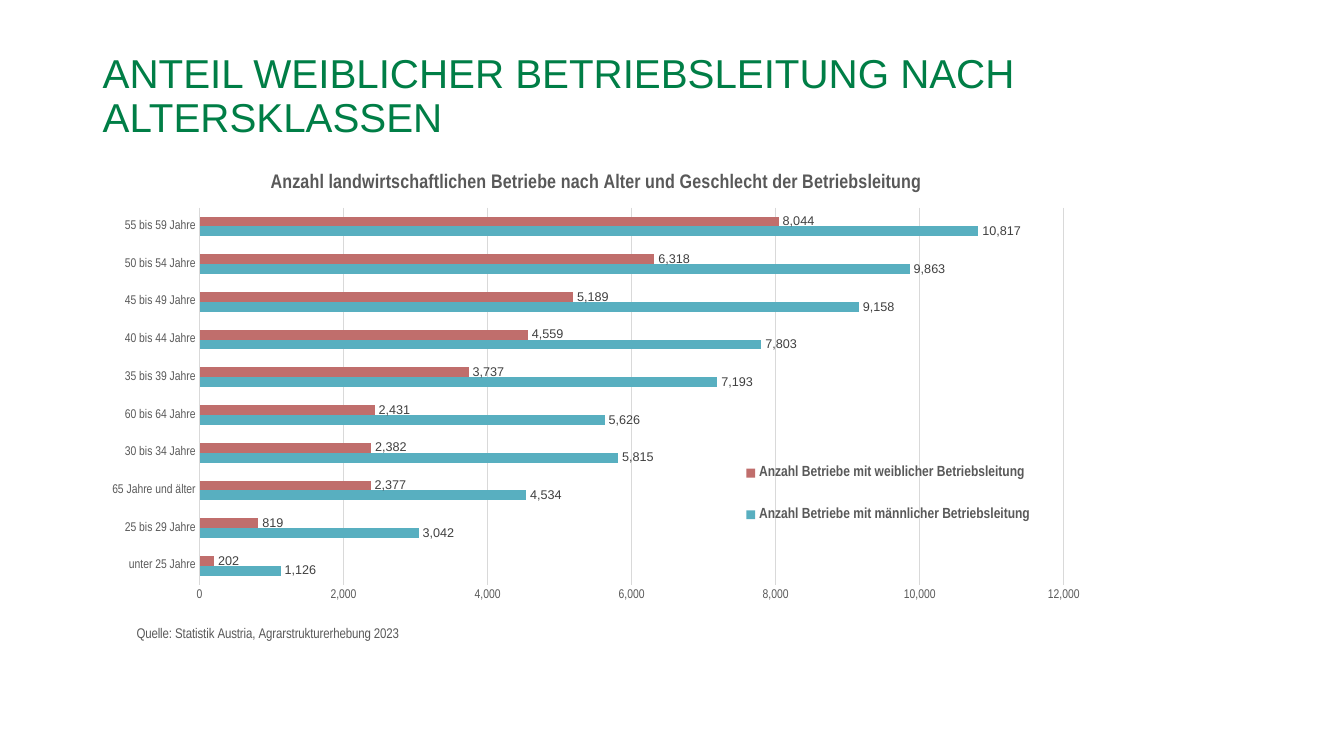
from lxml import etree
from pptx import Presentation
from pptx import util as u
from pptx.chart import data as cd
from pptx.dml import color as dc
from pptx.enum import chart as ec
from pptx.enum import text as et

HUES = {"green": "007E46", "grey": "595959", "dark": "404040", "black": "000000",
        "grid": "D9D9D9", "men": "58AFC0", "women": "C06E6C"}
AGES = ["unter 25 Jahre", "25 bis 29 Jahre", "65 Jahre und älter", "30 bis 34 Jahre",
        "60 bis 64 Jahre", "35 bis 39 Jahre", "40 bis 44 Jahre", "45 bis 49 Jahre",
        "50 bis 54 Jahre", "55 bis 59 Jahre"]
FARMS = {
    "men": ("Anzahl Betriebe mit männlicher Betriebsleitung",
            [1126, 3042, 4534, 5815, 5626, 7193, 7803, 9158, 9863, 10817]),
    "women": ("Anzahl Betriebe mit weiblicher Betriebsleitung",
              [202, 819, 2377, 2382, 2431, 3737, 4559, 5189, 6318, 8044]),
}


def put(item, **vals):
    for key, val in vals.items():
        setattr(item, key, val)


class Deck:
    wide, narrow = "Arial", "Arial Narrow"

    def __init__(self):
        self.prs = Presentation()
        put(self.prs, slide_width=u.Inches(13.33), slide_height=u.Inches(7.5))
        self.slide = self.prs.slides.add_slide(self.prs.slide_layouts[6])

    def hue(self, name):
        return dc.RGBColor.from_string(HUES[name])

    def font(self, font, size, tint, face, bold=False):
        put(font, size=u.Pt(size), name=face, bold=bold)
        font.color.rgb = self.hue(tint)

    def line(self, fmt):
        fmt.line.color.rgb = self.hue("grid")
        fmt.line.width = u.Pt(0.75)

    def head(self, words, *box):
        frame = self.slide.shapes.add_textbox(*map(u.Inches, box)).text_frame
        put(frame, word_wrap=True, vertical_anchor=et.MSO_ANCHOR.MIDDLE)
        para = frame.paragraphs[0]
        put(para, text=words, line_spacing=0.9)
        self.font(para.runs[0].font, 28.8, "green", self.wide)

    def place(self, node, spot, **vals):
        space = node.nsmap["c"]
        for old in node.findall(f"{{{space}}}layout"):
            node.remove(old)
        outer = etree.Element(f"{{{space}}}layout")
        manual = etree.SubElement(outer, f"{{{space}}}manualLayout")
        for key, val in vals.items():
            etree.SubElement(manual, f"{{{space}}}{key}").set("val", str(val))
        node.insert(spot, outer)

    def label(self, title, words, size, bold):
        para = title.text_frame.paragraphs[0]
        para.text = words
        self.font(para.runs[0].font, size, "grey", self.narrow, bold)

    def bars(self, cats, rows, *box):
        data = cd.CategoryChartData(number_format="#,##0")
        data.categories = cats
        for name, vals in rows.values():
            data.add_series(name, vals)
        chart = self.slide.shapes.add_chart(
            ec.XL_CHART_TYPE.BAR_CLUSTERED, *map(u.Inches, box), data).chart
        self.font(chart.font, 10, "black", self.wide)
        plot = chart.plots[0]
        put(plot, gap_width=182, overlap=0, vary_by_categories=False)
        for key, bar in zip(rows, plot.series):
            bar.format.fill.solid()
            bar.format.fill.fore_color.rgb = self.hue(key)
            tags = bar.data_labels
            put(tags, show_value=True, number_format="#,##0",
                number_format_is_linked=False,
                position=ec.XL_LABEL_POSITION.OUTSIDE_END)
            self.font(tags.font, 9, "dark", self.wide)
        return chart

    def axes(self, chart):
        cat, val = chart.category_axis, chart.value_axis
        for axis in (cat, val):
            put(axis, major_tick_mark=ec.XL_TICK_MARK.NONE,
                minor_tick_mark=ec.XL_TICK_MARK.NONE)
            self.font(axis.tick_labels.font, 9, "grey", self.narrow)
        cat.has_major_gridlines = False
        self.line(cat.format)
        put(val, minimum_scale=0, maximum_scale=12000, major_unit=2000)
        put(val.tick_labels, number_format="#,##0", number_format_is_linked=False)
        val.format.line.fill.background()
        self.line(val.major_gridlines.format)

    def notes(self, chart, title, source):
        chart.has_title = chart.has_legend = True
        self.label(chart.chart_title, title, 14, True)
        self.label(chart.value_axis.axis_title, source, 10, False)
        put(chart.legend, position=ec.XL_LEGEND_POSITION.BOTTOM, include_in_layout=False)
        self.font(chart.legend.font, 10.5, "grey", self.narrow, True)

    def arrange(self, chart):
        edge = dict(xMode="edge", yMode="edge")
        inner = dict(layoutTarget="inner", **edge)
        for route, spot, vals in (
                ("c:plotArea", 0, dict(inner, x=0.106, y=0.105, w=0.858, h=0.714)),
                ("c:title", 1, dict(edge, x=0.173, y=0.03)),
                ("c:plotArea/c:valAx/c:title", 1, dict(edge, x=0.041, y=0.895)),
                ("c:legend", 1, dict(edge, x=0.64, y=0.542, w=0.3, h=0.21))):
            node = chart.element.xpath("c:chart/" + route)[0]
            self.place(node, spot, **vals)


def main():
    deck = Deck()
    deck.head("ANTEIL WEIBLICHER BETRIEBSLEITUNG NACH ALTERSKLASSEN",
              0.92, 0.72, 9.99, 0.49)
    chart = deck.bars(AGES, FARMS, 0.92, 1.51, 9.99, 5.24)
    deck.axes(chart)
    deck.notes(chart,
               "Anzahl landwirtschaftlichen Betriebe nach Alter und Geschlecht der Betriebsleitung",
               "Quelle: Statistik Austria, Agrarstrukturerhebung 2023")
    deck.arrange(chart)
    deck.prs.save("out.pptx")


if __name__ == "__main__":
    main()
